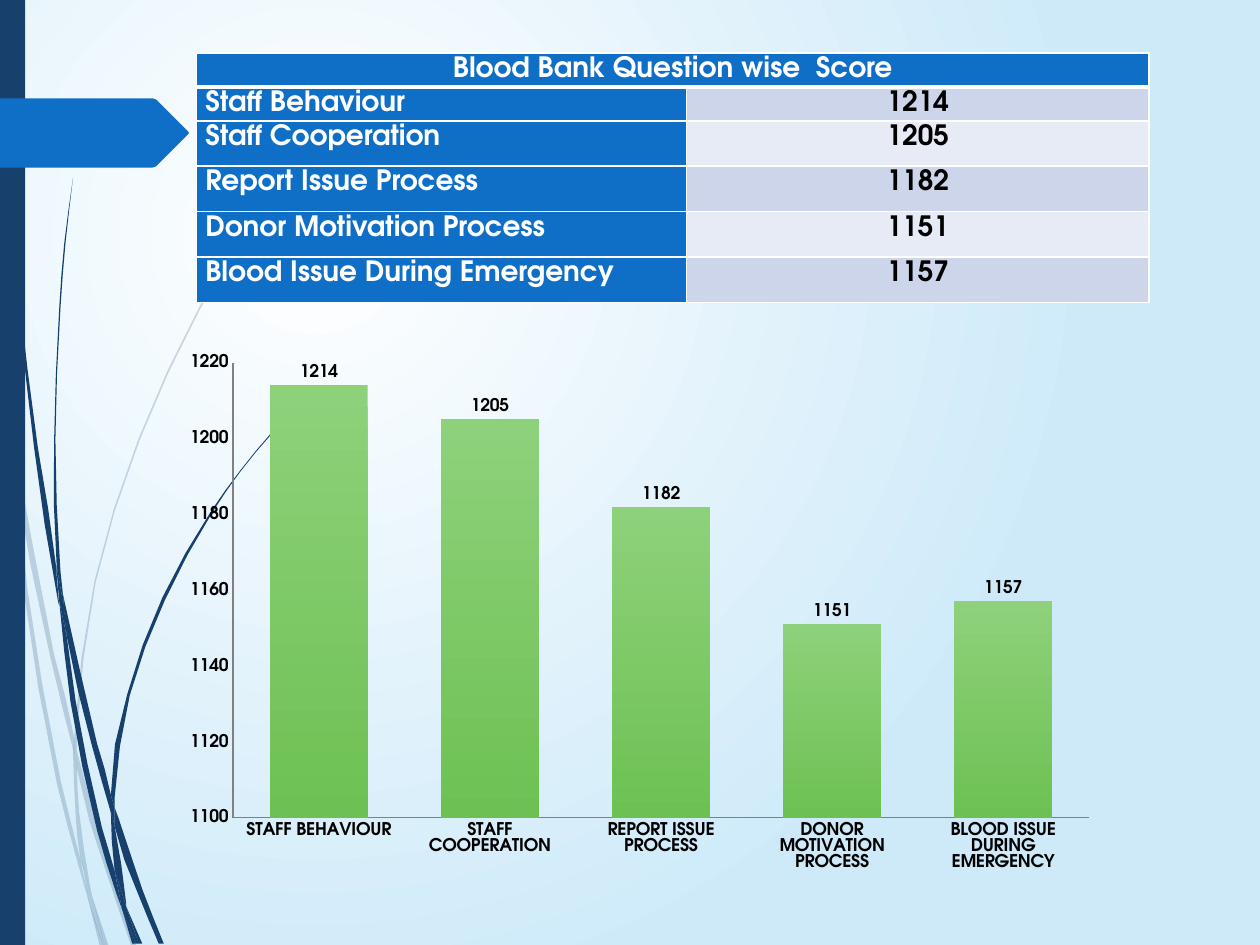
"""Build the blood bank score slide with its table, column chart and curved strands."""
from lxml import etree
from pptx import Presentation
from pptx.chart.data import CategoryChartData
from pptx.dml.color import RGBColor
from pptx.enum.chart import XL_CHART_TYPE, XL_LABEL_POSITION, XL_TICK_MARK
from pptx.enum.shapes import MSO_SHAPE
from pptx.enum.text import PP_ALIGN
from pptx.oxml import parse_xml
from pptx.oxml.ns import qn
from pptx.util import Pt

COLUMN = XL_CHART_TYPE.COLUMN_CLUSTERED
OUTSIDE = XL_LABEL_POSITION.OUTSIDE_END
NO_TICK = XL_TICK_MARK.NONE
RECT = MSO_SHAPE.RECTANGLE
CENTER, JUSTIFY = PP_ALIGN.CENTER, PP_ALIGN.JUSTIFY

FONT = "TeX Gyre Adventor"
NAVY, BLUE, WHITE, BLACK, GREY = "17406D", "0F6FC6", "FFFFFF", "000000", "808080"
SKY = [WHITE, "CEEAF9"]
GREEN = ["8ED17B", "6DC153"]
BANDS = ["CCD5EA", "E7EBF5"]
UNIT = 0.72
FINE = 100
LONG = 30

TITLE = "Blood Bank Question wise  Score"
SCORES = [
    ("Staff Behaviour", 1214),
    ("Staff Cooperation", 1205),
    ("Report Issue Process", 1182),
    ("Donor Motivation Process", 1151),
    ("Blood Issue During Emergency", 1157),
]
TABLE = (112.32, 30.24, 544.32, 149.04)
COLS = [280.08, 264.24]
ROWS = [19.44] * 2 + [25.92] * 4
CHART = (95.76, 198, 537.12, 306)
PLOT = {"x": 0.07, "y": 0.03, "w": 0.91, "h": 0.85}

PALE = [
    [(8, 350), (6, 322), (0, 282), (0, 299), (7, 344)],
    [(40, 522), (59, 599), (59, 586), (43, 520), (10, 345), (12, 376)],
    [(64, 607), (61, 596), (61, 610), (85, 694), (104, 750), (108, 750), (88, 692)],
    [(83, 750), (86, 750), (73, 711)],
    [(64, 683), (48, 619), (22, 469), (12, 376), (8, 350), (19, 470), (45, 621),
     (64, 693), (70, 714), (69, 707)],
    [(58, 599), (60, 646), (64, 683), (67, 692), (73, 711), (72, 706), (63, 646),
     (61, 610), (61, 608)],
    [(61, 584), (76, 462), (111, 349), (159, 245), (187, 198), (201, 175), (217, 154),
     (217, 153), (201, 175), (186, 197), (158, 244), (110, 348), (75, 461), (59, 584),
     (59, 586), (61, 596)],
    [(70, 714), (79, 750), (82, 750)],
    [(61, 608), (61, 610), (61, 596), (59, 586), (58, 599)],
    [(67, 692), (65, 683), (69, 707), (70, 714), (82, 750), (83, 750), (73, 711)],
]
DARK = [
    [(5, 110), (14, 233), (27, 355), (46, 477), (47, 481), (45, 457), (45, 453), (30, 355),
     (15, 232), (6, 109), (4, 48), (3, 0), (2, 0), (3, 48)],
    [(73, 592), (88, 645), (88, 633), (88, 631), (77, 590), (50, 472), (53, 505)],
    [(94, 649), (91, 641), (91, 656), (109, 708), (126, 749), (130, 749), (113, 706)],
    [(91, 691), (81, 657), (60, 556), (53, 505), (47, 477), (56, 557), (77, 659),
     (92, 708), (97, 722), (96, 717)],
    [(50, 472), (48, 453), (44, 349), (48, 245), (52, 193), (58, 141), (51, 193),
     (47, 245), (43, 349), (45, 449), (49, 472)],
    [(110, 749), (113, 749), (100, 719)],
    [(47, 477), (53, 505), (50, 472), (49, 472), (45, 449), (45, 453)],
    [(91, 633), (103, 552), (131, 476), (169, 406), (191, 374), (203, 359), (216, 344),
     (215, 344), (203, 358), (191, 373), (168, 405), (129, 474), (101, 551), (88, 631),
     (91, 641)],
    [(97, 722), (105, 749), (108, 749)],
    [(88, 645), (91, 691), (96, 706), (100, 719), (100, 716), (91, 656), (90, 651)],
    [(88, 645), (90, 651), (91, 656), (91, 641), (88, 631), (88, 633)],
    [(96, 706), (91, 691), (96, 717), (97, 722), (108, 749), (110, 749), (100, 719)],
]
ARROW = [(149, 107), (124, 132), (121, 133), (0, 133), (0, 78), (121, 78),
         (124, 79), (149, 104), (150, 105.5)]


def color(hue):
    return RGBColor.from_string(hue)


def paint(fill, hue):
    fill.solid()
    fill.fore_color.rgb = color(hue)


def blend(fill, hues):
    fill.gradient()
    for spot, (stop, hue) in enumerate(zip(fill.gradient_stops, hues)):
        stop.color.rgb, stop.position = color(hue), spot


def style(font, size, hue):
    for name, value in {"name": FONT, "size": Pt(size), "bold": True}.items():
        setattr(font, name, value)
    font.color.rgb = color(hue)


def flat(shape, hue):
    paint(shape.fill, hue)
    shape.line.fill.background()
    shape.shadow.inherit = False


def lean(before, knot, after, own):
    a, b = knot - before, after - knot
    a, b = a / abs(a), b / abs(b)
    return (a + b) / abs(a + b) if (a * b.conjugate()).real > 0.8 else own


def curve(points):
    knots = [complex(*p) for p in points]
    count, out = len(knots), []
    for i, start in enumerate(knots):
        end, last = knots[(i + 1) % count], knots[(i + 2) % count]
        out.append((start.real, start.imag))
        reach = abs(end - start)
        if reach > LONG:
            own = (end - start) / reach
            bend = lean(knots[i - 1], start, end, own) - lean(start, end, last, own)
            mid = (start + end) / 2 + bend * reach / 8
            out.append((mid.real, mid.imag))
    return out


def draw(shapes, points, hue):
    spots = [(x * FINE, y * FINE) for x, y in points]
    outline = shapes.build_freeform(*spots[0], scale=Pt(UNIT) / FINE)
    outline.add_line_segments(spots[1:], close=True)
    shape = outline.convert_to_shape()
    flat(shape, hue)
    return shape


def edge(cell, side, width):
    line = etree.SubElement(cell._tc.get_or_add_tcPr(), qn("a:" + side), w=str(Pt(width)))
    solid = etree.SubElement(line, qn("a:solidFill"))
    etree.SubElement(solid, qn("a:srgbClr"), val=WHITE)


def write(cell, text, align, hue, back, base=1):
    cell.text = text
    for side in ("left", "right", "top", "bottom"):
        setattr(cell, "margin_" + side, Pt(5 if side in ("left", "right") else 0))
    para = cell.text_frame.paragraphs[0]
    para.alignment, para.line_spacing = align, 1.15
    style(para.runs[0].font, 16, hue)
    for side, width in {"lnL": 1, "lnR": 1, "lnT": 1, "lnB": base}.items():
        edge(cell, side, width)
    paint(cell.fill, back)


def add_scores(slide):
    grid = slide.shapes.add_table(len(ROWS), len(COLS), *map(Pt, TABLE)).table
    for col, width in zip(grid.columns, COLS):
        col.width = Pt(width)
    for row, height in zip(grid.rows, ROWS):
        row.height = Pt(height)
    grid.cell(0, 0).merge(grid.cell(0, 1))
    write(grid.cell(0, 0), TITLE, CENTER, WHITE, BLUE, 3)
    for i, (name, score) in enumerate(SCORES):
        write(grid.cell(i + 1, 0), name, JUSTIFY, WHITE, BLUE)
        write(grid.cell(i + 1, 1), str(score), CENTER, BLACK, BANDS[i % 2])


def add_bars(slide):
    data = CategoryChartData()
    data.categories = [name.upper() for name, _ in SCORES]
    data.add_series("Series 1", [score for _, score in SCORES])
    chart = slide.shapes.add_chart(COLUMN, *map(Pt, CHART), data).chart
    chart.has_legend = chart.has_title = False
    style(chart.font, 10, BLACK)
    plot = chart.plots[0]
    plot.gap_width, plot.vary_by_categories, plot.has_data_labels = 75, False, True
    labels = plot.data_labels
    labels.show_value, labels.position = True, OUTSIDE
    style(labels.font, 10, BLACK)
    fill = plot.series[0].format.fill
    blend(fill, GREEN)
    fill.gradient_angle = 270
    for axis in (chart.category_axis, chart.value_axis):
        axis.major_tick_mark = axis.minor_tick_mark = NO_TICK
        axis.has_major_gridlines = False
        axis.format.line.color.rgb, axis.format.line.width = color(GREY), Pt(1)
        style(axis.tick_labels.font, 10, BLACK)
    scale = {"minimum_scale": 1100, "maximum_scale": 1220, "major_unit": 20}
    for name, value in scale.items():
        setattr(chart.value_axis, name, value)
    area = chart._chartSpace.chart.plotArea
    for old in area.findall(qn("c:layout")):
        area.remove(old)
    layout = etree.Element(qn("c:layout"))
    area.insert(0, layout)
    manual = etree.SubElement(layout, qn("c:manualLayout"))
    modes = {"layoutTarget": "inner", "xMode": "edge", "yMode": "edge"}
    for name, value in {**modes, **PLOT}.items():
        etree.SubElement(manual, qn("c:" + name), val=str(value))


def add_sky(slide):
    blend(slide.background.fill, SKY)
    lin = slide._element.find(".//" + qn("a:lin"))
    ring = parse_xml(
        '<a:path xmlns:a="http://schemas.openxmlformats.org/drawingml/2006/main" path="circle">'
        '<a:fillToRect l="50000" t="50000" r="100000" b="100000"/></a:path>')
    lin.getparent().replace(lin, ring)


def main():
    deck = Presentation()
    deck.slide_width, deck.slide_height = Pt(720), Pt(540)
    slide = deck.slides.add_slide(deck.slide_layouts[6])
    add_sky(slide)
    for strands, alpha in ((PALE, 20), (DARK, 100)):
        group = slide.shapes.add_group_shape()
        for strand in strands:
            shape = draw(group.shapes, curve(strand), NAVY)
            tint = shape._element.spPr.find(qn("a:solidFill"))[0]
            etree.SubElement(tint, qn("a:alpha"), val=str(alpha * 1000))
    flat(slide.shapes.add_shape(RECT, 0, 0, Pt(14.4), Pt(540)), NAVY)
    draw(slide.shapes, ARROW, BLUE)
    add_scores(slide)
    add_bars(slide)
    deck.save("out.pptx")


if __name__ == "__main__":
    main()
